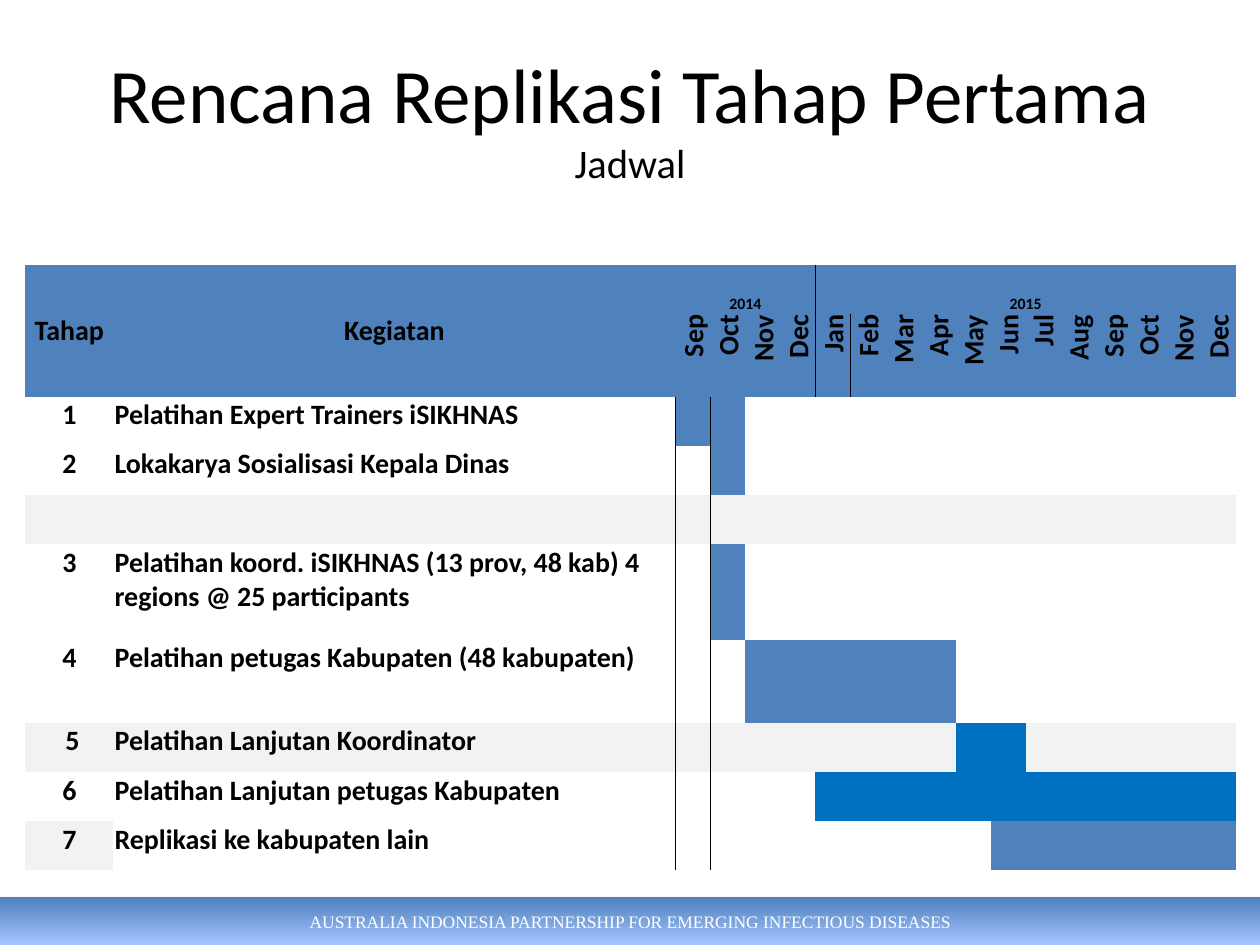
from dataclasses import dataclass

from lxml.etree import SubElement
from pptx import Presentation
from pptx.dml.color import RGBColor
from pptx.enum.shapes import MSO_SHAPE
from pptx.enum.text import MSO_ANCHOR, PP_ALIGN
from pptx.oxml import parse_xml
from pptx.oxml.ns import nsdecls, qn
from pptx.util import Inches, Pt


@dataclass(frozen=True)
class Theme:
    body_font: str = "Calibri"
    footer_font: str = "Times New Roman"
    black: str = "000000"
    white: str = "FFFFFF"
    blue: str = "4F81BD"
    deep_blue: str = "0070C0"
    light_blue: str = "A4C4FF"
    grey: str = "F2F2F2"
    title_size: float = 44
    subtitle_size: float = 23.2
    table_size: float = 16
    year_size: float = 9
    footer_size: float = 10


THEME = Theme()
NO_STYLE = "{2D5ABB26-0587-4C30-8999-92F81FD0307C}"
MONTHS_2014 = "Sep Oct Nov Dec".split()
MONTHS_2015 = "Jan Feb Mar Apr May Jun Jul Aug Sep Oct Nov Dec".split()
MONTHS = MONTHS_2014 + MONTHS_2015
FIRST_MONTH = 2
FIRST_2015 = FIRST_MONTH + len(MONTHS_2014)
HEADER_HEIGHTS = [0.39, 0.66]


@dataclass(frozen=True)
class Stage:
    number: str
    activity: str
    start: int = 0
    months: int = 0
    bar: str = THEME.blue
    height: float = 0.39
    shaded: int = 0


STAGES = [
    Stage("1", "Pelatihan Expert Trainers iSIKHNAS", 0, 2),
    Stage("2", "Lokakarya Sosialisasi Kepala Dinas", 1, 1),
    Stage("", "", shaded=18),
    Stage("3", "Pelatihan koord. iSIKHNAS (13 prov, 48 kab) 4 regions @ 25 participants",
          1, 1, height=0.76),
    Stage("4", "Pelatihan petugas Kabupaten (48 kabupaten)", 2, 6, height=0.66),
    Stage("\N{NO-BREAK SPACE}5", "Pelatihan Lanjutan Koordinator", 8, 2, THEME.deep_blue, shaded=18),
    Stage("6", "Pelatihan Lanjutan petugas Kabupaten", 4, 12, THEME.deep_blue),
    Stage("7", "Replikasi ke kabupaten lain", 9, 7, shaded=1),
]


def add_run(paragraph, text, size, color=THEME.black, font=THEME.body_font, bold=False):
    run = paragraph.add_run()
    run.text = text
    run.font.name = font
    run.font.size = Pt(size)
    run.font.bold = bold
    run.font.color.rgb = RGBColor.from_string(color)


def fill_cell(cell, text="", fill=None, align=PP_ALIGN.LEFT, anchor=MSO_ANCHOR.TOP,
              size=THEME.table_size):
    cell.margin_left = cell.margin_top = cell.margin_right = Inches(0.01)
    cell.margin_bottom = 0
    cell.vertical_anchor = anchor
    if fill:
        cell.fill.solid()
        cell.fill.fore_color.rgb = RGBColor.from_string(fill)
    else:
        cell.fill.background()
    if text:
        paragraph = cell.text_frame.paragraphs[0]
        paragraph.alignment = align
        add_run(paragraph, text, size, bold=True)


def add_divider(table, row, right_column):
    for column, side in ((right_column - 1, "lnR"), (right_column, "lnL")):
        properties = table.cell(row, column)._tc.get_or_add_tcPr()
        properties.insert(0, parse_xml(
            f'<a:{side} {nsdecls("a")} w="{Pt(0.5)}"><a:solidFill>'
            f'<a:srgbClr val="{THEME.black}"/></a:solidFill></a:{side}>'))


def add_header(table):
    for column, label in enumerate(("Tahap", "Kegiatan")):
        heading = table.cell(0, column)
        heading.merge(table.cell(1, column))
        fill_cell(heading, label, THEME.blue, PP_ALIGN.CENTER, MSO_ANCHOR.MIDDLE)
    for label, first, count in (("2014", FIRST_MONTH, len(MONTHS_2014)),
                                ("2015", FIRST_2015, len(MONTHS_2015))):
        year = table.cell(0, first)
        year.merge(table.cell(0, first + count - 1))
        fill_cell(year, label, THEME.blue, PP_ALIGN.CENTER, MSO_ANCHOR.BOTTOM, THEME.year_size)
    for column, label in enumerate(MONTHS, FIRST_MONTH):
        month = table.cell(1, column)
        fill_cell(month, label, THEME.blue, PP_ALIGN.RIGHT, MSO_ANCHOR.BOTTOM)
        month._tc.get_or_add_tcPr().set("vert", "vert270")
    for row in range(len(HEADER_HEIGHTS)):
        add_divider(table, row, FIRST_2015)


def add_stage(table, row, stage):
    bar_start = FIRST_MONTH + stage.start
    texts = {0: stage.number, 1: stage.activity}
    for column in range(FIRST_MONTH + len(MONTHS)):
        fill = THEME.grey if column < stage.shaded else None
        if bar_start <= column < bar_start + stage.months:
            fill = stage.bar
        align = PP_ALIGN.CENTER if column == 0 else PP_ALIGN.LEFT
        fill_cell(table.cell(row, column), texts.get(column, ""), fill, align)
    add_divider(table, row, FIRST_MONTH)


def add_schedule(slide, left, top, width, height):
    row_heights = HEADER_HEIGHTS + [stage.height for stage in STAGES]
    label_widths = [Inches(0.7), Inches(4.46)]
    month_width = (width - sum(label_widths)) // len(MONTHS)
    column_widths = label_widths + [month_width] * len(MONTHS)
    table = slide.shapes.add_table(
        len(row_heights), len(column_widths), left, top, width, height).table
    table._tbl.tblPr.find(qn("a:tableStyleId")).text = NO_STYLE
    table.first_row = table.horz_banding = False
    for column, column_width in zip(table.columns, column_widths):
        column.width = column_width
    for row, row_height in zip(table.rows, row_heights):
        row.height = Inches(row_height)
    add_header(table)
    for row, stage in enumerate(STAGES, len(HEADER_HEIGHTS)):
        add_stage(table, row, stage)


def add_title(slide, left, top, width, height):
    frame = slide.shapes.add_textbox(left, top, width, height).text_frame
    frame.word_wrap = True
    frame.vertical_anchor = MSO_ANCHOR.MIDDLE
    paragraph = frame.paragraphs[0]
    paragraph.alignment = PP_ALIGN.CENTER
    add_run(paragraph, "Rencana Replikasi Tahap Pertama", THEME.title_size)
    paragraph.add_line_break()
    add_run(paragraph, "Jadwal", THEME.subtitle_size)


def add_footer(slide, left, top, width, height):
    footer = slide.shapes.add_shape(MSO_SHAPE.RECTANGLE, left, top, width, height)
    footer.line.fill.background()
    footer.fill.gradient()
    footer.fill.gradient_angle = 270
    for stop, color, position in zip(footer.fill.gradient_stops,
                                     (THEME.blue, THEME.light_blue), (0, 1)):
        stop.color.rgb = RGBColor.from_string(color)
        stop.position = position
    footer.shadow.inherit = False
    effects = footer._element.spPr.find(qn("a:effectLst"))
    shadow = SubElement(effects, qn("a:outerShdw"), blurRad=str(Pt(3.1)),
                        dist=str(Pt(1.8)), dir="5400000", rotWithShape="0")
    shade = SubElement(shadow, qn("a:srgbClr"), val=THEME.black)
    SubElement(shade, qn("a:alpha"), val="35000")
    frame = footer.text_frame
    frame.word_wrap = True
    frame.vertical_anchor = MSO_ANCHOR.MIDDLE
    paragraph = frame.paragraphs[0]
    paragraph.alignment = PP_ALIGN.CENTER
    add_run(paragraph, "AUSTRALIA INDONESIA PARTNERSHIP FOR EMERGING INFECTIOUS DISEASES",
            THEME.footer_size, THEME.white, THEME.footer_font)


def main():
    presentation = Presentation()
    presentation.slide_width, presentation.slide_height = Inches(10), Inches(7.5)
    slide = presentation.slides.add_slide(presentation.slide_layouts[6])
    add_footer(slide, Inches(0), Inches(7.12), Inches(10), Inches(0.38))
    add_title(slide, Inches(0.5), Inches(0.3), Inches(9), Inches(1.25))
    add_schedule(slide, Inches(0.2), Inches(2.1), Inches(9.61), Inches(4.8))
    presentation.save("out.pptx")


if __name__ == "__main__":
    main()
